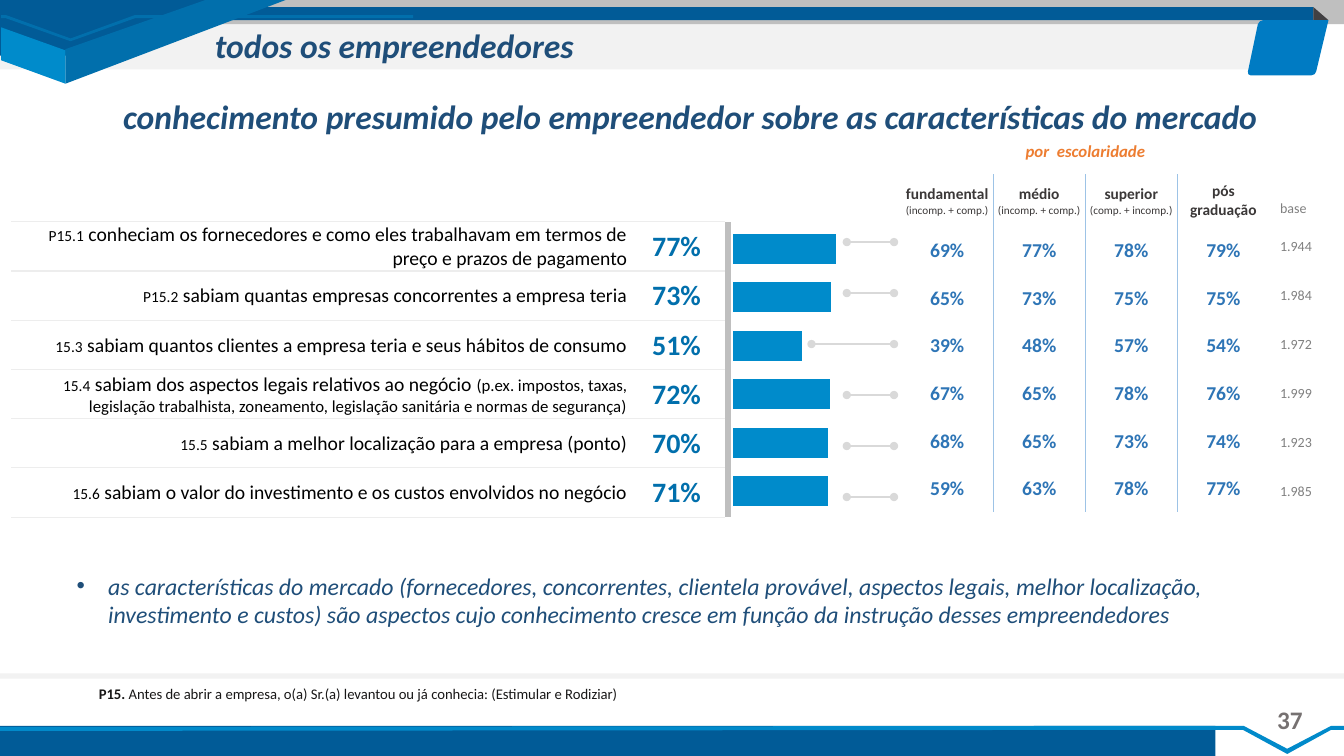
from lxml import etree
from pptx import Presentation
from pptx import util as u
from pptx.chart.data import CategoryChartData
from pptx.dml.color import RGBColor
from pptx.enum import chart, shapes, text
from pptx.oxml import parse_xml
from pptx.oxml.ns import qn

NS_A = 'xmlns:a="http://schemas.openxmlformats.org/drawingml/2006/main"'
NS_C = 'xmlns:c="http://schemas.openxmlformats.org/drawingml/2006/chart"'
NO_GRID = "{2D5ABB26-0587-4C30-8999-92F81FD0307C}"
LEFT, CENTER, RIGHT = text.PP_ALIGN.LEFT, text.PP_ALIGN.CENTER, text.PP_ALIGN.RIGHT

STATEMENTS = [
    ("77%", [("P15.1", 11), (" conheciam os fornecedores e como eles trabalhavam em termos de preço e prazos de pagamento", 14)]),
    ("73%", [("P15.2", 11), (" sabiam quantas empresas concorrentes a empresa teria", 14)]),
    ("51%", [("15.3", 11), (" sabiam quantos clientes a empresa teria e seus hábitos de consumo", 14)]),
    ("72%", [("15.4", 11), (" sabiam dos aspectos legais relativos ao negócio ", 14),
             ("(p.ex. impostos, taxas, legislação trabalhista, zoneamento, legislação sanitária e normas de segurança)", 12)]),
    ("70%", [("15.5", 11), (" sabiam a melhor localização para a empresa (ponto)", 14)]),
    ("71%", [("15.6", 11), (" sabiam o valor do investimento e os custos envolvidos no negócio", 14)]),
]
BARS = [100, 95, 67, 94, 92, 92]
LEVELS = [("fundamental", "(incomp. + comp.)"), ("médio", "(incomp. + comp.)"),
          ("superior", "(comp. + incomp.)"), ("pós graduação", None)]
SHARES = [(69, 77, 78, 79), (65, 73, 75, 75), (39, 48, 57, 54),
          (67, 65, 78, 76), (68, 65, 73, 74), (59, 63, 78, 77)]
BASES = ["1.944", "1.984", "1.972", "1.999", "1.923", "1.985"]


def rgb(value):
    return RGBColor.from_string(value)


def cm(*values):
    return [u.Cm(v) for v in values]


def paint(sp, fill):
    sp.shadow.inherit = False
    sp.fill.solid()
    sp.fill.fore_color.rgb = rgb(fill)
    sp.line.fill.background()


def add_rect(s, box, fill):
    paint(s.shapes.add_shape(shapes.MSO_SHAPE.RECTANGLE, *cm(*box)), fill)


def add_polygon(s, left, top, points, fill):
    start, *rest = [cm(left + x, top + y) for x, y in points]
    builder = s.shapes.build_freeform(*start)
    builder.add_line_segments(rest, close=True)
    paint(builder.convert_to_shape(), fill)


def style(p, size, color, bold=False, italic=False, align=LEFT):
    p.alignment = align
    f = p.font
    f.name, f.size, f.bold, f.italic = "Calibri", u.Pt(size), bold, italic
    f.color.rgb = rgb(color)


def set_text(sp, box, words, size, color, spacing=0.9, **look):
    sp.left, sp.top, sp.width, sp.height = cm(*box)
    tf = sp.text_frame
    tf.word_wrap = True
    tf.auto_size = text.MSO_AUTO_SIZE.NONE
    tf.vertical_anchor = text.MSO_ANCHOR.TOP
    p = tf.paragraphs[0]
    p.text = words
    p.line_spacing = spacing
    style(p, size, color, **look)
    return p


def add_text(s, box, words, size, color, **look):
    return set_text(s.shapes.add_textbox(*cm(*box)), box, words, size, color, **look)


def add_grid(s, left, top, widths, heights):
    frame = s.shapes.add_table(len(heights), len(widths), *cm(left, top, sum(widths), sum(heights)))
    table = frame.table
    table.first_row = table.horz_banding = False
    table._tbl.tblPr.find(qn("a:tableStyleId")).text = NO_GRID
    for col, width in zip(table.columns, widths):
        col.width = u.Cm(width)
    for row, height in zip(table.rows, heights):
        row.height = u.Cm(height)
    return table


def format_cell(cell, sides="", border="EDEDED", fill=None):
    cell.margin_left = cell.margin_right = cell.margin_top = u.Cm(0.03)
    cell.margin_bottom = 0
    cell.vertical_anchor = text.MSO_ANCHOR.MIDDLE
    for side in sides:
        cell._tc.get_or_add_tcPr().append(parse_xml(
            f'<a:ln{side} {NS_A} w="12700"><a:solidFill><a:srgbClr val="{border}"/></a:solidFill></a:ln{side}>'))
    if fill:
        cell.fill.solid()
        cell.fill.fore_color.rgb = rgb(fill)
    else:
        cell.fill.background()
    return cell.text_frame.paragraphs[0]


def draw_header(s, left, top, width):
    add_rect(s, (left, top + 0.38, width - 1.1, 1.37), "F2F2F2")
    add_rect(s, (left, top, width, 0.61), "BFBFBF")
    add_rect(s, (left + 2.87, top + 0.18, width - 3.64, 0.33), "015B97")
    for fill, points in [
        ("015B97", [(0, 0), (6.58, 0), (3.28, 1.4), (0, 1.4)]),
        ("016FAC", [(7.2, 0), (5.18, 0), (1.65, 1.24), (1.65, 2.11)]),
        ("008BCB", [(1.65, 1.27), (0.03, 0.69), (0.03, 1.52), (1.65, 2.11)]),
        ("016FAC", [(0.03, 0.38), (0.15, 0.38), (1.78, 0.97), (3.4, 0.38), (10.41, 0.38),
                    (10.41, 0.46), (3.4, 0.46), (1.78, 1.04), (0.15, 0.46), (0.03, 0.46)]),
        ("414042", [(33.1, 0.51), (33.1, 0.18), (33.48, 0.51)]),
        ("007BC3", [(31.83, 0.51), (33.48, 0.51), (33.17, 1.8), (33.13, 1.87), (33.05, 1.9),
                    (31.52, 1.9), (31.46, 1.87), (31.45, 1.8), (31.7, 0.61), (31.75, 0.54)]),
    ]:
        add_polygon(s, left, top, points, fill)
    set_text(s.shapes.title, (left + 5.16, top + 0.61, 26.44, 1.3), "todos os empreendedores",
             24, "1F4E79", bold=True, italic=True)
    s.shapes._spTree.append(s.shapes.title._element)


def draw_footer(s, left, top, width):
    add_rect(s, (left, top, width, 0.13), "F2F2F2")
    add_rect(s, (left, top + 1.32, 30.63, 0.76), "015B97")
    add_polygon(s, left, top, [(0, 1.35), (31.34, 1.32), (32.44, 1.9), (33.55, 1.32), (width, 1.32),
                               (width, 1.42), (33.55, 1.42), (32.44, 2.03), (31.32, 1.42), (0, 1.45)], "018ACA")
    add_text(s, (left + 31.72, top + 0.66, 1.57, 1.02), "37", 18, "767171", spacing=1, bold=True, align=CENTER)
    p = add_text(s, (left + 2.24, top + 0.15, 26.8, 1), "", 10.5, "181717", spacing=1)
    for words, bold in [("P15. ", True),
                        ("Antes de abrir a empresa, o(a) Sr.(a) levantou ou já conhecia: (Estimular e Rodiziar)", False)]:
        r = p.add_run()
        r.text, r.font.bold = words, bold


def draw_statements(s, left, top):
    table = add_grid(s, left, top, [15.56, 2.42, 0.15], [1.24] * len(STATEMENTS))
    for row, (share, parts) in zip(table.rows, STATEMENTS):
        statement, total, axis = row.cells
        p = format_cell(statement, "TB")
        style(p, 14, "000000", align=RIGHT)
        for words, size in parts:
            r = p.add_run()
            r.text, r.font.size = words, u.Pt(size)
        p = format_cell(total, "TB")
        p.text = share
        style(p, 20, "016FAC", bold=True, align=CENTER)
        style(format_cell(axis, fill="BFBFBF"), 10, "000000")


def draw_bars(s, left, top, width, height):
    data = CategoryChartData()
    data.categories = [str(i + 1) for i in range(len(BARS))]
    data.add_series("Series 1", BARS)
    ch = s.shapes.add_chart(chart.XL_CHART_TYPE.BAR_CLUSTERED, *cm(left, top, width, height), data).chart
    ch.has_legend = ch.has_title = False
    ch.font.name, ch.font.size = "Calibri", u.Pt(10)
    ch.font.color.rgb = rgb("000000")
    ch.category_axis.reverse_order = True
    ch.value_axis.minimum_scale, ch.value_axis.maximum_scale = 0, 130
    ch.value_axis.has_major_gridlines = False
    ch.category_axis.visible = ch.value_axis.visible = False
    plot = ch.plots[0]
    plot.gap_width, plot.vary_by_categories = 62, False
    fill = plot.series[0].format.fill
    fill.solid()
    fill.fore_color.rgb = rgb("008BCB")
    area = ch._chartSpace.chart.plotArea
    for old in area.findall(qn("c:layout")):
        area.remove(old)
    area.insert(0, parse_xml(
        f'<c:layout {NS_C}><c:manualLayout><c:layoutTarget val="inner"/><c:xMode val="edge"/><c:yMode val="edge"/>'
        '<c:x val="0.01"/><c:y val="0"/><c:w val="0.97"/><c:h val="1"/></c:manualLayout></c:layout>'))


def draw_links(s, right, top, step):
    for i, bar in enumerate(BARS):
        y = top + i * step
        start = right - (2.08 if bar < 90 else 1.19)
        line = s.shapes.add_connector(shapes.MSO_CONNECTOR.STRAIGHT, *cm(right, y, start, y))
        line.line.color.rgb = rgb("D9D9D9")
        line.line.width = u.Pt(1.5)
        for end in ("headEnd", "tailEnd"):
            etree.SubElement(line.line._get_or_add_ln(), qn(f"a:{end}"), type="oval")
        etree.SubElement(line._element.spPr, qn("a:effectLst"))


def draw_schooling(s, left, top):
    add_text(s, (left + 2.69, top - 0.91, 3.91, 0.61), "por  escolaridade", 12, "ED7D31",
             bold=True, italic=True, align=CENTER)
    table = add_grid(s, left, top, [2.32] * len(LEVELS), [1.32] + [1.2] * len(SHARES))
    for c, (level, detail) in enumerate(LEVELS):
        sides = ("L" if c else "") + ("R" if c < len(LEVELS) - 1 else "")
        head = table.cell(0, c)
        p = format_cell(head, sides, "9DC3E6")
        p.text = level
        style(p, 11, "3B3838", bold=True, align=CENTER)
        if detail:
            p = head.text_frame.add_paragraph()
            p.text = detail
            style(p, 8, "3B3838", align=CENTER)
        for i, shares in enumerate(SHARES):
            p = format_cell(table.cell(i + 1, c), sides, "9DC3E6")
            p.text = f"{shares[c]}%"
            style(p, 14, "2E75B6", bold=True, align=CENTER)
    add_text(s, (left + 9.3, top + 0.56, 1.52, 0.74), "base", 10, "808080")
    for i, base in enumerate(BASES):
        add_text(s, (left + 9.3, top + 1.52 + i * 1.235, 1.52, 0.61), base, 10, "808080")


def draw_conclusion(s, box):
    p = set_text(s.placeholders[1], box,
                 "as características do mercado (fornecedores, concorrentes, clientela provável, aspectos legais, "
                 "melhor localização, investimento e custos) são aspectos cujo conhecimento cresce em função da "
                 "instrução desses empreendedores", 17, "1F4E79", spacing=1, italic=True)
    p.space_before = 0
    pPr = p._p.get_or_add_pPr()
    pPr.set("marL", str(u.Cm(0.79)))
    pPr.set("indent", str(-u.Cm(0.79)))
    pPr.find(qn("a:defRPr")).addprevious(parse_xml(f'<a:buChar {NS_A} char="•"/>'))


def main():
    prs = Presentation()
    prs.slide_width, prs.slide_height = cm(33.87, 19.05)
    s = prs.slides.add_slide(prs.slide_layouts[1])
    draw_header(s, 0, 0, 33.87)
    draw_footer(s, 0, 16.97, 33.87)
    add_text(s, (2.64, 2.41, 29.51, 1.35), "conhecimento presumido pelo empreendedor sobre as características do mercado",
             24, "1F4E79", bold=True, italic=True, align=CENTER)
    draw_statements(s, 0.28, 5.59)
    draw_bars(s, 18.44, 5.66, 3.48, 7.34)
    draw_links(s, 22.53, 6.1, 1.285)
    draw_schooling(s, 22.71, 4.39)
    draw_conclusion(s, (1.68, 14.27, 30.58, 1.7))
    prs.save("out.pptx")


if __name__ == "__main__":
    main()
